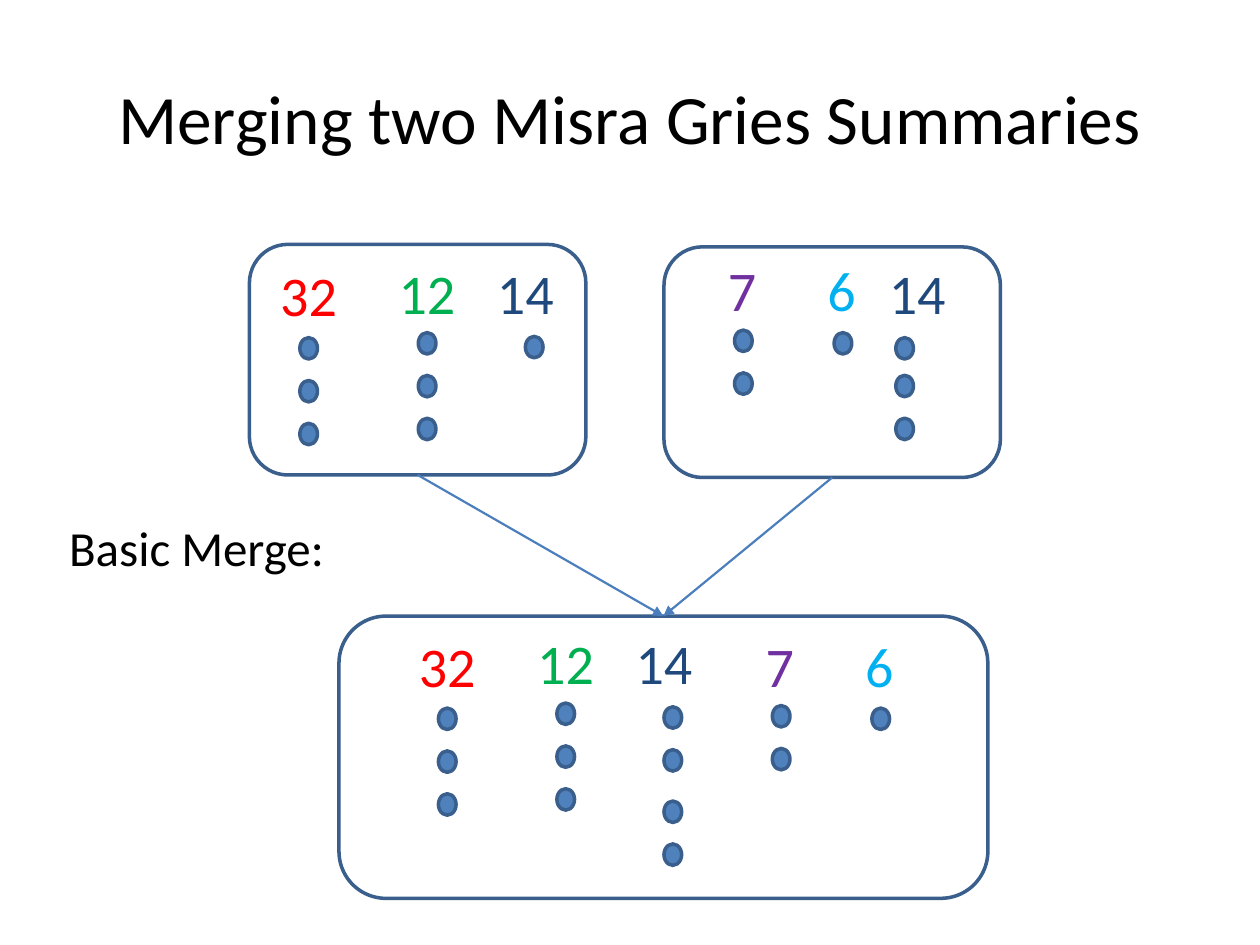
from collections import namedtuple

from lxml.etree import SubElement
from pptx import Presentation
from pptx.dml.color import RGBColor
from pptx.enum.shapes import MSO_CONNECTOR, MSO_SHAPE
from pptx.enum.text import MSO_ANCHOR, PP_ALIGN
from pptx.oxml.ns import qn
from pptx.util import Inches, Pt

COLORS = {
    "text": "000000", "dot": "4F81BD", "outline": "3A5F8C", "arrow": "4B7EBC",
    "32": "FF0000", "12": "00B050", "14": "1F497D", "7": "7030A0", "6": "00B0F0",
}
FONT = "Calibri"
CELL = 0.1  # inches; the slide is a grid of 100 columns by 75 rows
DOT_W, DOT_H, DOT_STEP = 1.4, 1.7, 3.4
BOTTOM, TOP = 2, 0

# Columns are centres and rows are tops; steps are the dots' rows in DOT_STEPs.
Counter = namedtuple("Counter", "item col row dot_col dot_row steps")

LEFT = [
    Counter("32", 24.5, 20.2, 24.5, 26.8, (0, 1, 2)),
    Counter("12", 33.9, 20, 33.9, 26.4, (0, 1, 2)),
    Counter("14", 41.7, 20, 42.4, 26.7, (0,)),
]
RIGHT = [
    Counter("7", 58.9, 19.8, 59, 26.2, (0, 1)),
    Counter("6", 66.8, 19.8, 66.9, 26.4, (0,)),
    Counter("14", 72.8, 20, 71.8, 26.8, (0, 0.88, 1.88)),
]
MERGED_14_STEPS = (0, 1, 2.2, 3.2)


def cells(*values):
    return [Inches(v * CELL) for v in values]


def rgb(name):
    return RGBColor.from_string(COLORS[name])


def moved(counter, cols, rows):
    return counter._replace(col=counter.col + cols, row=counter.row + rows,
                            dot_col=counter.dot_col + cols,
                            dot_row=counter.dot_row + rows)


def merged_counters():
    """Left counters with the shared 14 extended, then the remaining right ones."""
    left = [moved(c, 11, 29.4) for c in LEFT]
    left[-1] = left[-1]._replace(steps=MERGED_14_STEPS)
    right = [moved(c, 3, 29.8) for c in RIGHT if c.item != "14"]
    return left + right


def add_text(slide, text, box, size, color="text", align=PP_ALIGN.LEFT,
             anchor=MSO_ANCHOR.TOP, wrap=False):
    tf = slide.shapes.add_textbox(*cells(*box)).text_frame
    tf.word_wrap = wrap
    tf.vertical_anchor = anchor
    p = tf.paragraphs[0]
    p.text = text
    p.alignment = align
    p.font.name, p.font.size = FONT, Pt(size)
    p.font.color.rgb = rgb(color)


def add_outlined(slide, kind, box, fill=None):
    sp = slide.shapes.add_shape(kind, *cells(*box))
    sp.shadow.inherit = False
    if fill:
        sp.fill.solid()
        sp.fill.fore_color.rgb = rgb(fill)
    else:
        sp.fill.background()
    sp.line.color.rgb = rgb("outline")
    sp.line.width = Pt(2)
    return sp


def add_counter(slide, counter):
    """Item label with its column of dots."""
    width = 2 + 2.3 * len(counter.item)
    add_text(slide, counter.item, (counter.col - width / 2, counter.row, width, 6.4),
             32, counter.item, PP_ALIGN.CENTER)
    for step in counter.steps:
        box = (counter.dot_col - DOT_W / 2, counter.dot_row + step * DOT_STEP,
               DOT_W, DOT_H)
        add_outlined(slide, MSO_SHAPE.OVAL, box, "dot")


def add_summary(slide, box, counters):
    for counter in counters:
        add_counter(slide, counter)
    return add_outlined(slide, MSO_SHAPE.ROUNDED_RECTANGLE, box)


def add_arrow(slide, source, target):
    line = slide.shapes.add_connector(MSO_CONNECTOR.STRAIGHT, 0, 0, 0, 0)
    line.begin_connect(source, BOTTOM)
    line.end_connect(target, TOP)
    line.line.color.rgb = rgb("arrow")
    line.line.width = Pt(1.25)
    SubElement(line.line._get_or_add_ln(), qn("a:tailEnd"), type="triangle")
    SubElement(line._element.spPr, qn("a:effectLst"))


def main():
    prs = Presentation()
    prs.slide_width, prs.slide_height = cells(100, 75)
    slide = prs.slides.add_slide(prs.slide_layouts[6])

    add_text(slide, "Merging two Misra Gries Summaries", (5, 3, 90, 12.5), 39.6,
             align=PP_ALIGN.CENTER, anchor=MSO_ANCHOR.MIDDLE, wrap=True)
    left = add_summary(slide, (19.8, 19.4, 26.7, 18.3), LEFT)
    right = add_summary(slide, (52.7, 19.6, 26.7, 18.3), RIGHT)
    merged = add_summary(slide, (26.9, 48.9, 51.5, 22.4), merged_counters())
    for source in (left, right):
        add_arrow(slide, source, merged)
    add_text(slide, "Basic Merge:", (4.5, 40.6, 22.5, 5.7), 28)

    prs.save("out.pptx")


if __name__ == "__main__":
    main()
